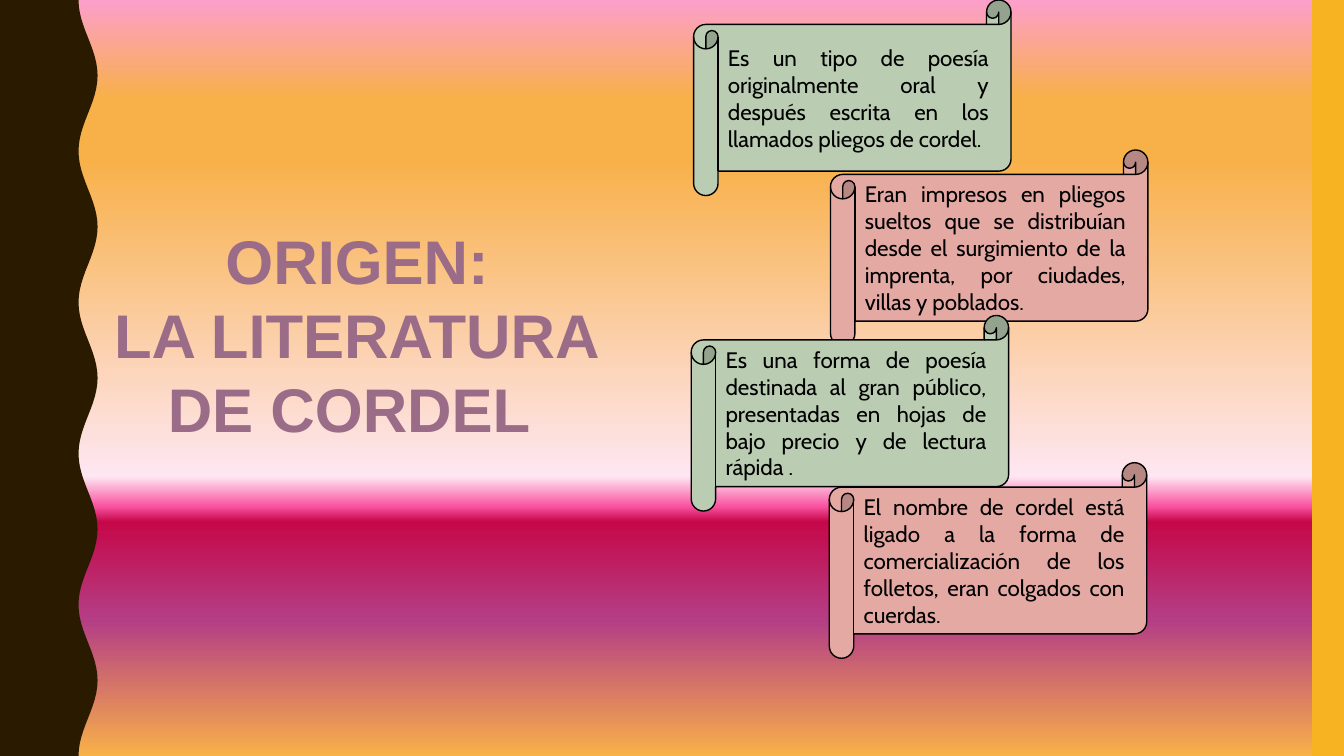
import math

from lxml import etree
from pptx import Presentation
from pptx.dml.color import RGBColor
from pptx.enum.shapes import MSO_SHAPE
from pptx.enum.text import MSO_ANCHOR, MSO_AUTO_SIZE, PP_ALIGN
from pptx.oxml.ns import qn
from pptx.util import Cm, Pt

SCROLL = MSO_SHAPE.HORIZONTAL_SCROLL
RECTANGLE = MSO_SHAPE.RECTANGLE
TOP, MIDDLE = MSO_ANCHOR.TOP, MSO_ANCHOR.MIDDLE
NO_AUTOFIT = MSO_AUTO_SIZE.NONE
CENTER, JUSTIFY = PP_ALIGN.CENTER, PP_ALIGN.JUSTIFY

BLACK = RGBColor(0x00, 0x00, 0x00)
DARK_BROWN = RGBColor(0x2A, 0x1A, 0x00)
GOLD = RGBColor(0xF8, 0xB3, 0x23)
MAUVE = RGBColor(0x9B, 0x6C, 0x88)
SAGE = RGBColor(0xBA, 0xCC, 0xB2)
ROSE = RGBColor(0xE5, 0xA9, 0xA4)
AMBER = RGBColor(0xF8, 0xB0, 0x49)
SUNSET = [
    (0, RGBColor(0xFC, 0x9F, 0xCB)),
    (13, AMBER),
    (21, AMBER),
    (63, RGBColor(0xFE, 0xE7, 0xF2)),
    (67, RGBColor(0xF9, 0x52, 0xA0)),
    (69, RGBColor(0xC5, 0x08, 0x49)),
    (82, RGBColor(0xB4, 0x3E, 0x85)),
    (100, AMBER),
]

SLIDE_WIDTH, SLIDE_HEIGHT = 33.87, 19.05
WAVE_MIDDLE, WAVE_DEPTH, WAVE_COUNT, STEPS_PER_WAVE = 2.22, 0.24, 5, 24
SCROLL_WIDTH, SCROLL_HEIGHT = 8, 4.93

TITLE_LINES = ["ORIGEN:", "LA LITERATURA", "DE CORDEL "]
# Left, top, colour and text, from back to front
SCROLLS = [
    (17.48, 0, SAGE, "Es un tipo de poesía originalmente oral y después "
                     "escrita en los llamados pliegos de cordel."),
    (20.9, 11.66, ROSE, "El nombre de cordel está ligado a la forma de "
                        "comercialización de los folletos, eran colgados "
                        "con cuerdas."),
    (20.93, 3.78, ROSE, "Eran impresos en pliegos sueltos que se distribuían "
                        "desde el surgimiento de la imprenta, por ciudades, "
                        "villas y poblados."),
    (17.42, 7.95, SAGE, "Es una forma de poesía destinada al gran público, "
                        "presentadas en hojas de bajo precio y de lectura "
                        "rápida ."),
]


def paint_background(slide, stops):
    fill = slide.background.fill
    fill.gradient()
    fill.gradient_angle = 270
    stop_list = next(slide.element.iter(qn("a:gsLst")))
    for default_stop in list(stop_list):
        stop_list.remove(default_stop)
    for percent, color in stops:
        stop = etree.SubElement(stop_list, qn("a:gs"), pos=str(percent * 1000))
        etree.SubElement(stop, qn("a:srgbClr"), val=str(color))


def paint_plain(shape, color):
    shape.shadow.inherit = False
    shape.fill.solid()
    shape.fill.fore_color.rgb = color
    shape.line.fill.background()


def add_wavy_edge(slide):
    steps = WAVE_COUNT * STEPS_PER_WAVE
    outline = []
    for step in range(steps + 1):
        x = WAVE_MIDDLE - WAVE_DEPTH * math.cos(math.tau * step / STEPS_PER_WAVE)
        outline.append((Cm(x), Cm(SLIDE_HEIGHT * step / steps)))
    outline.append((0, Cm(SLIDE_HEIGHT)))
    builder = slide.shapes.build_freeform(0, 0)
    builder.add_line_segments(outline, close=True)
    paint_plain(builder.convert_to_shape(), DARK_BROWN)


def add_side_bar(slide):
    bar = slide.shapes.add_shape(
        RECTANGLE, Cm(33.07), 0, Cm(0.8), Cm(SLIDE_HEIGHT))
    paint_plain(bar, GOLD)


def format_paragraph(paragraph, font_name, size, color, alignment, bold=False):
    paragraph.alignment = alignment
    font = paragraph.font
    font.name, font.size, font.bold = font_name, Pt(size), bold
    font.color.rgb = color


def place_title(slide, lines):
    title = slide.shapes.title
    title.left, title.top = Cm(2.44), Cm(5.49)
    title.width, title.height = Cm(13.13), Cm(5.89)
    frame = title.text_frame
    frame.text = "\n".join(lines)
    frame.word_wrap = True
    frame.auto_size = NO_AUTOFIT
    frame.vertical_anchor = TOP
    for paragraph in frame.paragraphs:
        format_paragraph(paragraph, "Arial", 44, MAUVE, CENTER, bold=True)


def add_scroll(slide, left, top, color, text):
    scroll = slide.shapes.add_shape(
        SCROLL, Cm(left), Cm(top), Cm(SCROLL_WIDTH), Cm(SCROLL_HEIGHT))
    paint_plain(scroll, color)
    scroll.line.color.rgb = BLACK
    scroll.line.width = Pt(1)
    frame = scroll.text_frame
    frame.text = text
    frame.word_wrap = True
    frame.vertical_anchor = MIDDLE
    format_paragraph(frame.paragraphs[0], "Cabin", 16, BLACK, JUSTIFY)


def main():
    presentation = Presentation()
    presentation.slide_width = Cm(SLIDE_WIDTH)
    presentation.slide_height = Cm(SLIDE_HEIGHT)
    title_only = presentation.slide_layouts[5]
    slide = presentation.slides.add_slide(title_only)

    # Backdrop
    paint_background(slide, SUNSET)
    add_wavy_edge(slide)
    add_side_bar(slide)

    # Content
    place_title(slide, TITLE_LINES)
    for left, top, color, text in SCROLLS:
        add_scroll(slide, left, top, color, text)

    presentation.save("out.pptx")


if __name__ == "__main__":
    main()
